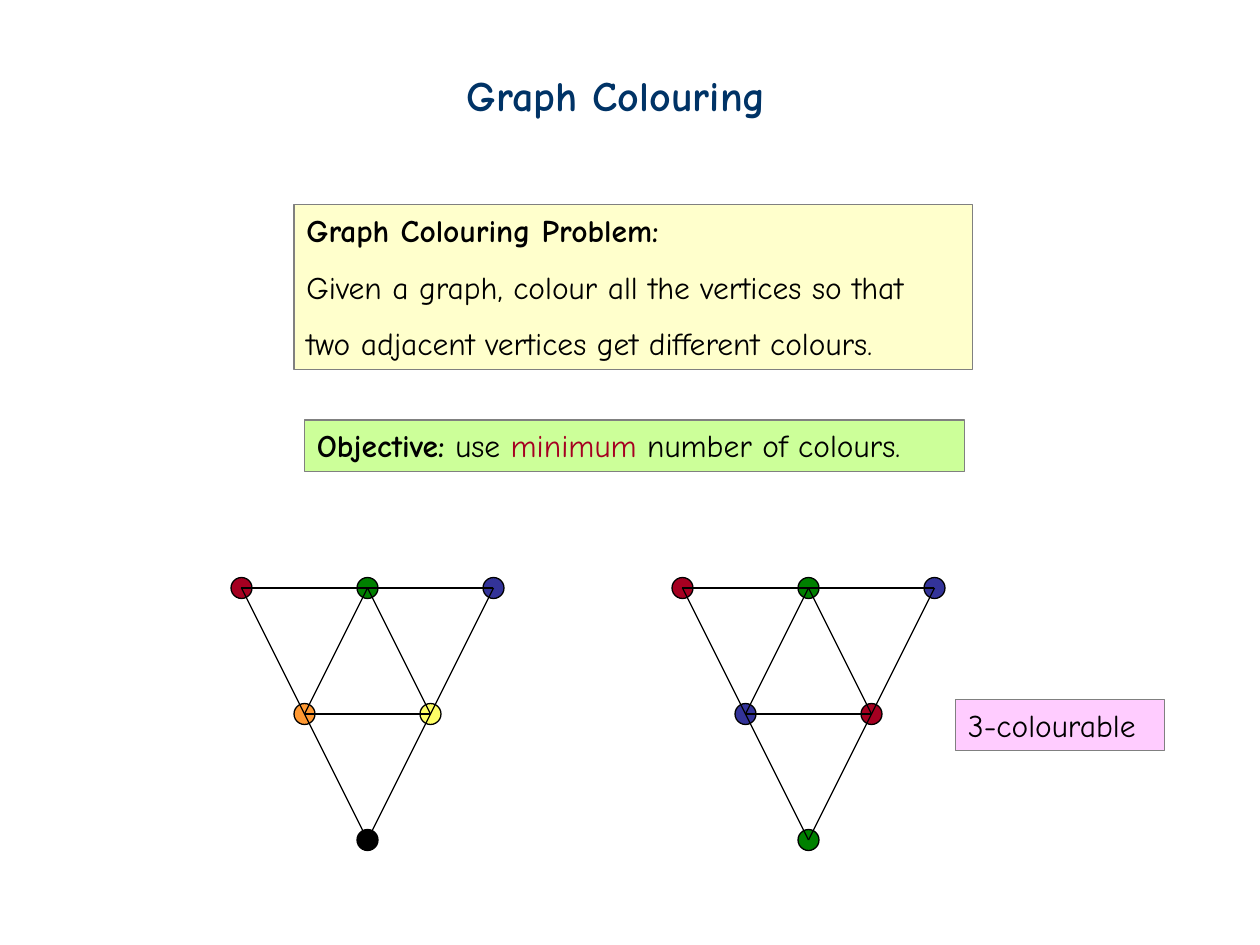
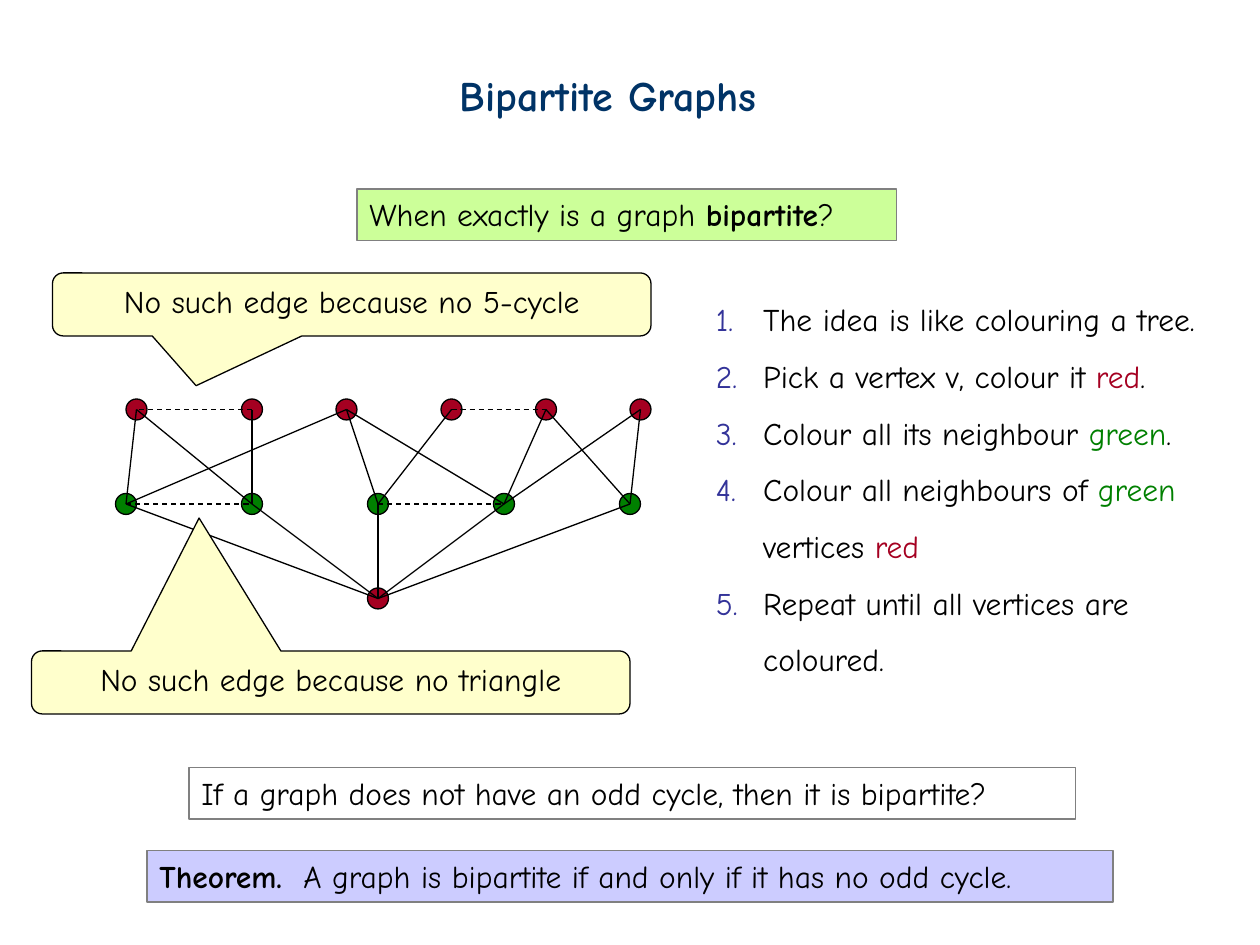
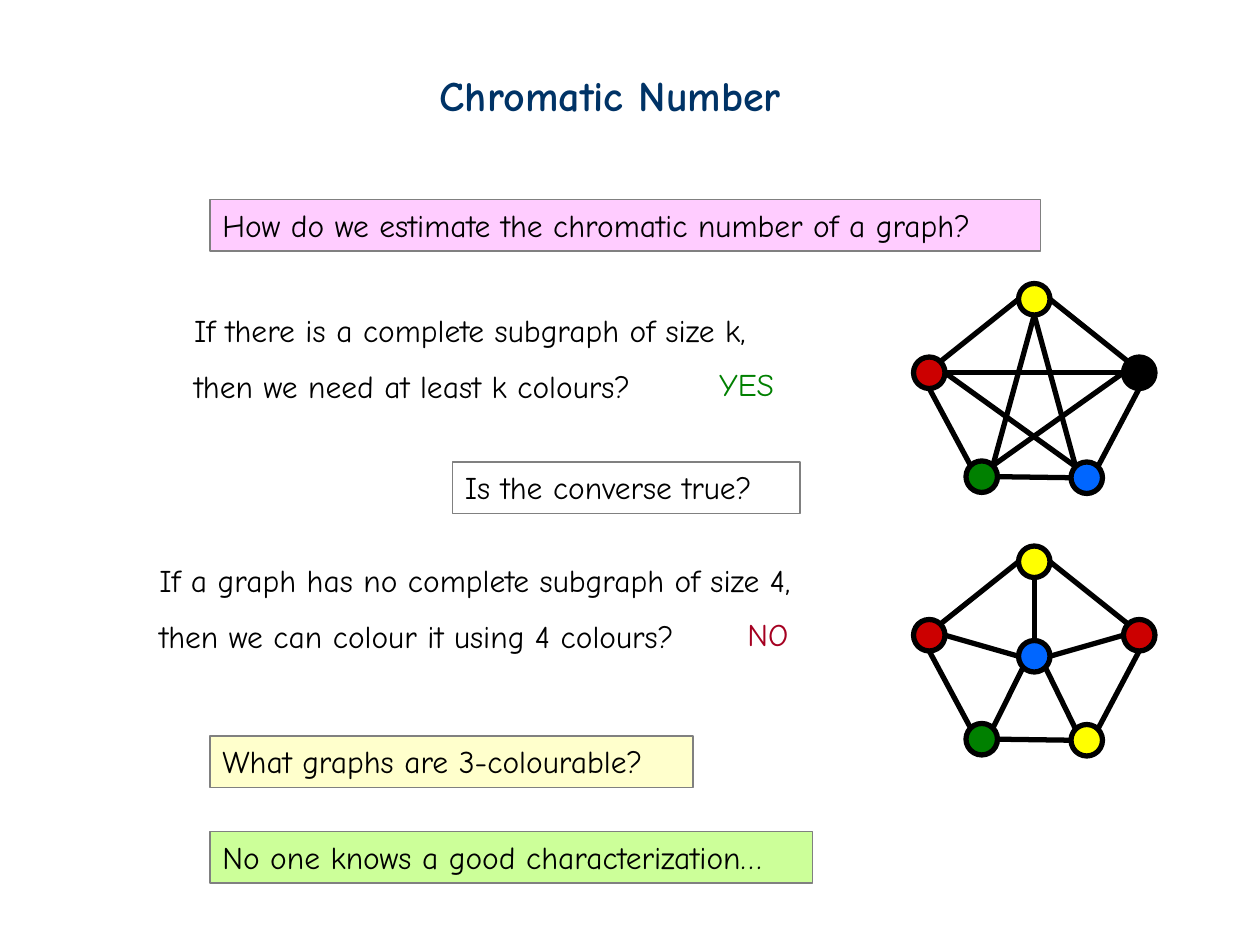
from dataclasses import dataclass

from lxml import etree
from pptx import Presentation
from pptx import util as u
from pptx.dml import color as col
from pptx.enum import dml, shapes as sh, text as tx
from pptx.oxml import ns

PX = 7620  # EMU per px, 120 px to the inch


@dataclass(frozen=True)
class Theme:
    font: str = "Comic Neue"
    head: float = 24
    body: float = 18
    thin: float = 0.75
    thick: float = 3
    lead: float = 1.5
    navy: str = "003366"
    ink: str = "000000"
    gray: str = "808080"
    cream: str = "FFFFCC"
    lime: str = "CCFF99"
    pink: str = "FFCCFF"
    lilac: str = "CCCCFF"
    red: str = "A50021"
    green: str = "008000"
    blue: str = "333399"
    amber: str = "FF9933"
    lemon: str = "FFFF66"
    scarlet: str = "CC0000"
    yellow: str = "FFFF00"
    azure: str = "0066FF"


T = Theme()
LINE = 49  # height of a one-line panel
SITES = {"": (0, 0), "n": (0, -1), "e": (1, 0), "s": (0, 1), "w": (-1, 0),
         "ne": (0.71, -0.71), "se": (0.71, 0.71),
         "sw": (-0.71, 0.71), "nw": (-0.71, -0.71)}


def px(*vals):
    return [u.Emu(round(v * PX)) for v in vals]


def rgb(code):
    return col.RGBColor.from_string(code)


def bold(words):
    return words, T.ink, True


def paint(shape, fill, line, width=T.thin):
    shape.shadow.inherit = False
    if fill:
        shape.fill.solid()
        shape.fill.fore_color.rgb = rgb(fill)
    else:
        shape.fill.background()
    shape.line.color.rgb = rgb(line)
    shape.line.width = u.Pt(width)


def write(shape, paras, size=T.body, align=tx.PP_ALIGN.LEFT):
    """Fill a shape with paragraphs; a run is a string or (words, colour, bold)."""
    frame = shape.text_frame
    frame.word_wrap = True
    frame.vertical_anchor = tx.MSO_ANCHOR.TOP
    for i, runs in enumerate(paras):
        para = frame.add_paragraph() if i else frame.paragraphs[0]
        para.alignment = align
        if i:
            para.line_spacing = T.lead
        for item in runs:
            words, tint, heavy = (item, T.ink, False) if isinstance(item, str) else item
            run = para.add_run()
            run.text = words
            run.font.name = T.font
            run.font.size = u.Pt(size)
            run.font.bold = heavy
            run.font.color.rgb = rgb(tint)
    return frame


def label(slide, box, *paras, size=T.body):
    return write(slide.shapes.add_textbox(*px(*box)), paras, size)


def panel(slide, box, fill, *paras):
    shape = slide.shapes.add_shape(sh.MSO_SHAPE.RECTANGLE, *px(*box))
    paint(shape, fill, T.gray)
    write(shape, paras)


def callout(slide, box, tip, words):
    """Speech panel; tip is the pointer's end, as shares of the box from its centre."""
    shape = slide.shapes.add_shape(sh.MSO_SHAPE.ROUNDED_RECTANGULAR_CALLOUT, *px(*box))
    for i, val in enumerate(tip):
        shape.adjustments[i] = val
    paint(shape, T.cream, T.ink)
    write(shape, [[words]], align=tx.PP_ALIGN.CENTER)


def number(frame):
    for para in frame.paragraphs:
        props = para._p.get_or_add_pPr()
        props.set("marL", str(45 * PX))
        props.set("indent", str(-45 * PX))
        tint = etree.SubElement(props, ns.qn("a:buClr"))
        etree.SubElement(tint, ns.qn("a:srgbClr"), val=T.blue)
        etree.SubElement(props, ns.qn("a:buFont"), typeface="+mj-lt")
        etree.SubElement(props, ns.qn("a:buAutoNum"), type="arabicPeriod")


def graph(parts, at, dots, edges, dashed="", rad=10, width=T.thin):
    """Draw dots {name: (x, y, colour)} and edges such as "a-b" or "a.e-b.nw"."""
    left, top = at
    for x, y, fill in dots.values():
        dot = parts.add_shape(sh.MSO_SHAPE.OVAL,
                              *px(left + x - rad, top + y - rad, 2 * rad, 2 * rad))
        paint(dot, fill, T.ink, width)

    def end(mark):
        name, _, site = mark.partition(".")
        x, y, _ = dots[name]
        dx, dy = SITES[site]
        return left + x + rad * dx, top + y + rad * dy

    for links, dash in ((edges, False), (dashed, True)):
        for link in links.split():
            start, stop = link.split("-")
            line = parts.add_connector(sh.MSO_CONNECTOR.STRAIGHT,
                                       *px(*end(start), *end(stop)))
            line.line.color.rgb = rgb(T.ink)
            line.line.width = u.Pt(width)
            if dash:
                line.line.dash_style = dml.MSO_LINE.DASH
            etree.SubElement(line._element.spPr, ns.qn("a:effectLst"))


def triangle(slide, at, tints):
    spots = [(10, 10), (130, 10), (250, 10), (70, 130), (190, 130), (130, 250)]
    dots = {name: (*spot, tint) for name, spot, tint in zip("abcdef", spots, tints)}
    graph(slide.shapes, at, dots, "a-f a-c c-f b-d d-e b-e")


def layers(slide, at):
    """Graph in three rows: reds, greens, and one red root."""
    dots = {"root": (250, 190, T.red)}
    dots |= {f"g{i}": (10 + 120 * i, 100, T.green) for i in range(5)}
    dots |= {f"r{i}": (x, 10, T.red)
             for i, x in enumerate((20, 130, 220, 320, 410, 500))}
    graph(slide.shapes, at, dots,
          " ".join(f"g{i}-root" for i in range(5))
          + " g0-r0 r0-g1 g0-r2 g1-r1 g2-r2 g2-r3 g3-r4 g3-r2 g4-r4 g4-r5 g3-r5",
          "g0-g1 g2-g3 r3-r4 r1-r0")


def pentagon(slide, at, tints, inner):
    """Ring of five, with an optional hub as sixth, joined by the inner edges."""
    spots = {"top": (115, 15), "left": (15, 85), "right": (215, 85),
             "sw": (65, 184), "se": (165, 185), "hub": (115, 105)}
    dots = {name: (*spots[name], tint) for name, tint in zip(spots, tints)}
    ring = "sw.e-se.w top.e-right.nw right.s-se.ne top.w-left.ne left.s-sw.nw "
    graph(slide.shapes.add_group_shape().shapes, at, dots, ring + inner,
          rad=15, width=T.thick)


def start(deck, title, left, wide):
    slide = deck.slides.add_slide(deck.slide_layouts[6])
    label(slide, (left, 60, wide, 60), [(title, T.navy, True)], size=T.head)
    return slide


def colouring(deck):
    slide = start(deck, "Graph Colouring", 433, 326)
    panel(slide, (280, 195, 646, 157), T.cream,
          [bold("Graph Colouring Problem:")],
          ["Given a graph, colour all the vertices so that"],
          ["two adjacent vertices get different colours."])
    panel(slide, (290, 400, 629, LINE), T.lime,
          [bold("Objective:"), " use ", ("minimum", T.red, False),
           " number of colours."])
    triangle(slide, (220, 550),
             (T.red, T.green, T.blue, T.amber, T.lemon, T.ink))
    triangle(slide, (640, 550),
             (T.red, T.green, T.blue, T.blue, T.red, T.green))
    panel(slide, (910, 666, 199, LINE), T.pink, ["3-colourable"])


def bipartite(deck):
    slide = start(deck, "Bipartite Graphs", 426, 344)
    panel(slide, (340, 180, 514, LINE), T.lime,
          ["When exactly is a graph ", bold("bipartite"), "?"])
    layers(slide, (110, 380))
    callout(slide, (50, 260, 570, 60), (-0.26, 1.29, 0.17),
            "No such edge because no 5-cycle")
    callout(slide, (30, 620, 570, 60), (-0.22, -2.61, 0.17),
            "No such edge because no triangle")
    red, green = ("red", T.red, False), ("green", T.green, False)
    number(label(slide, (670, 280, 500, 409),
                 ["The idea is like colouring a tree."],
                 ["Pick a vertex v, colour it ", red, "."],
                 ["Colour all its neighbour ", green, "."],
                 ["Colour all neighbours of ", green, " vertices ", red],
                 ["Repeat until all vertices are coloured."]))
    panel(slide, (180, 731, 844, LINE), None,
          ["If a graph does not have an odd cycle, then it is bipartite?"])
    panel(slide, (140, 810, 920, LINE), T.lilac,
          [bold("Theorem."),
           "  A graph is bipartite if and only if it has no odd cycle."])


def chromatic(deck):
    slide = start(deck, "Chromatic Number", 407, 383)
    panel(slide, (200, 190, 791, LINE), T.pink,
          ["How do we estimate the chromatic number of a graph?"])
    label(slide, (173, 290, 617, 102),
          ["If there is a complete subgraph of size k,"],
          ["then we need at least k colours?"])
    label(slide, (673, 342, 83, 48), [("YES", T.green, False)])
    panel(slide, (431, 440, 331, LINE), None, ["Is the converse true?"])
    label(slide, (140, 528, 684, 102),
          ["If a graph has no complete subgraph of size 4,"],
          ["then we can colour it using 4 colours?"])
    label(slide, (700, 580, 72, 48), [("NO", T.red, False)])
    panel(slide, (200, 701, 460, LINE), T.cream, ["What graphs are 3-colourable?"])
    panel(slide, (200, 792, 574, LINE), T.lime,
          ["No one knows a good characterization…"])
    pentagon(slide, (870, 270),
             (T.yellow, T.scarlet, T.ink, T.green, T.azure),
             "top.s-se.nw top.s-sw.ne left.e-right.w se.nw-left.e sw.ne-right.w")
    pentagon(slide, (870, 520),
             (T.yellow, T.scarlet, T.scarlet, T.green, T.yellow, T.azure),
             "top.s-hub.n hub.e-right.w hub.se-se.nw hub.sw-sw.ne hub.w-left.e")


def main():
    deck = Presentation()
    deck.slide_width, deck.slide_height = px(1200, 900)
    for build in (colouring, bipartite, chromatic):
        build(deck)
    deck.save("out.pptx")


if __name__ == "__main__":
    main()
